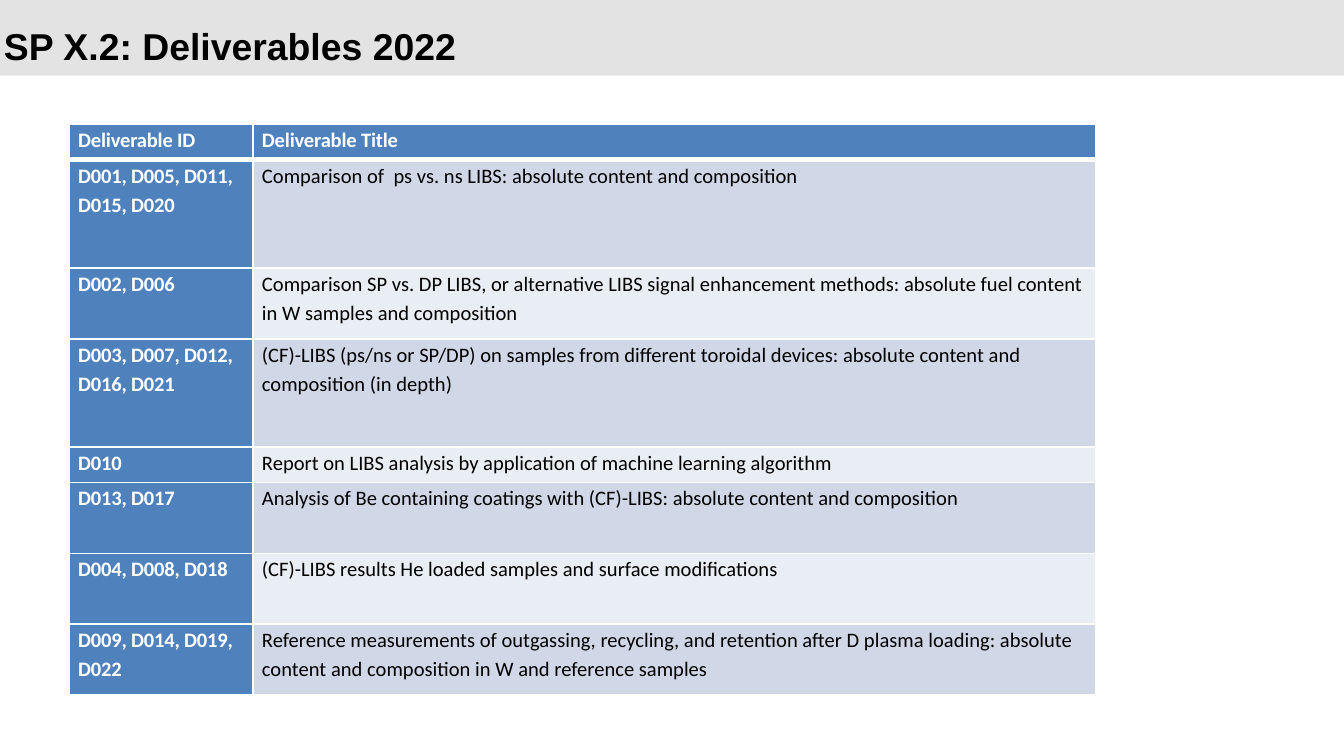
from typing import NamedTuple

from lxml import etree
from pptx import Presentation
from pptx.dml.color import RGBColor
from pptx.enum.shapes import MSO_SHAPE
from pptx.enum.text import MSO_ANCHOR
from pptx.oxml.ns import qn
from pptx.util import Pt

RECTANGLE = MSO_SHAPE.RECTANGLE
MIDDLE = MSO_ANCHOR.MIDDLE

WHITE = "FFFFFF"
BLACK = "000000"
BAND_GREY = "E3E3E3"
HEADER_BLUE = "4F81BD"
ROW_TINTS = ("D0D8E8", "E9EDF4")

SLIDE_WIDTH, SLIDE_HEIGHT = 720, 405
COLUMN_WIDTHS = (98.5, 451.5)
ONE_LINE, TWO_LINES, THREE_LINES = 19, 38, 58


class Deliverable(NamedTuple):
    ids: str
    title: str
    height: float


HEADER = Deliverable("Deliverable ID", "Deliverable Title", ONE_LINE)
DELIVERABLES = (
    Deliverable("D001, D005, D011, D015, D020",
                "Comparison of  ps vs. ns LIBS: absolute content and composition",
                THREE_LINES),
    Deliverable("D002, D006",
                "Comparison SP vs. DP LIBS, or alternative LIBS signal enhancement "
                "methods: absolute fuel content in W samples and composition",
                TWO_LINES),
    Deliverable("D003, D007, D012, D016, D021",
                "(CF)-LIBS (ps/ns or SP/DP) on samples from different toroidal "
                "devices: absolute content and composition (in depth)",
                THREE_LINES),
    Deliverable("D010",
                "Report on LIBS analysis by application of machine learning algorithm",
                ONE_LINE),
    Deliverable("D013, D017",
                "Analysis of Be containing coatings with (CF)-LIBS: absolute content "
                "and composition",
                TWO_LINES),
    Deliverable("D004, D008, D018",
                "(CF)-LIBS results He loaded samples and surface modifications",
                TWO_LINES),
    Deliverable("D009, D014, D019, D022",
                "Reference measurements of outgassing, recycling, and retention after "
                "D plasma loading: absolute content and composition in W and "
                "reference samples",
                TWO_LINES),
)


def rgb(color: str) -> RGBColor:
    return RGBColor.from_string(color)


def write(frame, text: str, *, font: str, size: float, color: str, bold: bool,
          line_spacing, space_after: float = 0, tracking: int = 0) -> None:
    frame.word_wrap = True
    paragraph = frame.paragraphs[0]
    paragraph.line_spacing = line_spacing
    paragraph.space_after = Pt(space_after)
    run = paragraph.add_run()
    run.text = text
    run.font.name = font
    run.font.size = Pt(size)
    run.font.bold = bold
    run.font.color.rgb = rgb(color)
    if tracking:
        run.font._element.set("spc", str(tracking))


def add_borders(cell, top: float, bottom: float) -> None:
    properties = cell._tc.get_or_add_tcPr()
    widths = {"a:lnL": 1, "a:lnR": 1, "a:lnT": top, "a:lnB": bottom}
    for side, width in widths.items():
        line = etree.SubElement(properties, qn(side), w=str(Pt(width)))
        fill = etree.SubElement(line, qn("a:solidFill"))
        etree.SubElement(fill, qn("a:srgbClr"), val=WHITE)


def fill_cell(cell, text: str, *, fill: str, color: str, bold: bool,
              tracking: int, top: float, bottom: float) -> None:
    cell.margin_left = cell.margin_right = Pt(4.9)
    cell.margin_top = cell.margin_bottom = Pt(0)
    add_borders(cell, top, bottom)
    cell.fill.solid()
    cell.fill.fore_color.rgb = rgb(fill)
    write(cell.text_frame, text, font="Calibri", size=11, color=color, bold=bold,
          line_spacing=1.15, space_after=2.4, tracking=tracking)


def add_title_band(slide, text: str) -> None:
    band = slide.shapes.add_shape(RECTANGLE, Pt(0), Pt(0), Pt(SLIDE_WIDTH), Pt(40.5))
    band.shadow.inherit = False
    band.fill.solid()
    band.fill.fore_color.rgb = rgb(BAND_GREY)
    band.line.fill.background()
    title = slide.shapes.add_textbox(Pt(-5), Pt(6.5), Pt(665), Pt(27.5))
    title.text_frame.vertical_anchor = MIDDLE
    write(title.text_frame, text, font="Arial", size=20, color=BLACK, bold=True,
          line_spacing=Pt(32))


def add_deliverables(slide, deliverables: tuple[Deliverable, ...]) -> None:
    entries = (HEADER, *deliverables)
    table = slide.shapes.add_table(
        len(entries), len(COLUMN_WIDTHS), Pt(37), Pt(66.5),
        Pt(sum(COLUMN_WIDTHS)), Pt(sum(entry.height for entry in entries))).table
    for column, width in zip(table.columns, COLUMN_WIDTHS):
        column.width = Pt(width)
    for index, entry in enumerate(entries):
        table.rows[index].height = Pt(entry.height)
        is_header = index == 0
        edges = {"top": 3 if index == 1 else 1, "bottom": 3 if is_header else 1}
        heading = {"fill": HEADER_BLUE, "color": WHITE, "bold": True, "tracking": -10}
        body = {"fill": ROW_TINTS[(index - 1) % 2], "color": BLACK, "bold": False,
                "tracking": 0}
        fill_cell(table.cell(index, 0), entry.ids, **heading, **edges)
        fill_cell(table.cell(index, 1), entry.title,
                  **(heading if is_header else body), **edges)


def main() -> None:
    presentation = Presentation()
    presentation.slide_width = Pt(SLIDE_WIDTH)
    presentation.slide_height = Pt(SLIDE_HEIGHT)
    slide = presentation.slides.add_slide(presentation.slide_layouts[6])
    add_title_band(slide, "SP X.2: Deliverables 2022")
    add_deliverables(slide, DELIVERABLES)
    presentation.save("out.pptx")


if __name__ == "__main__":
    main()
